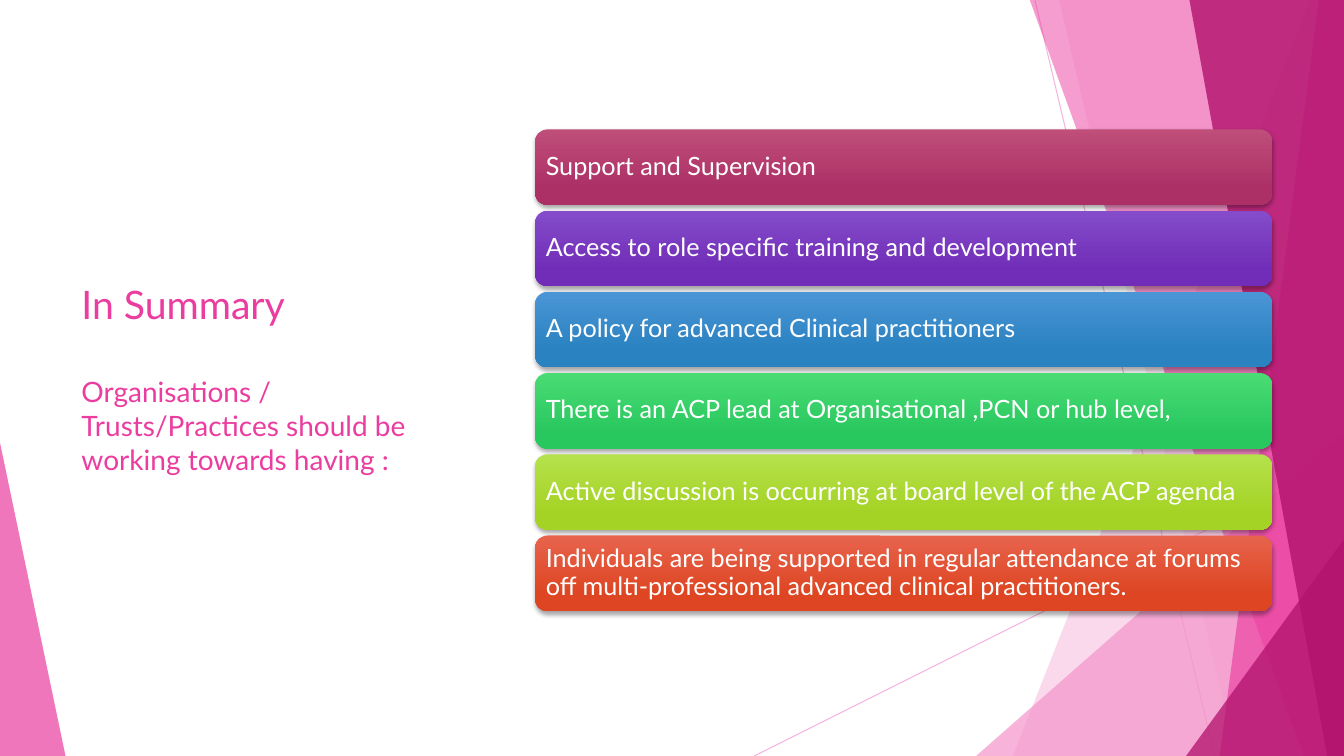
from lxml.etree import SubElement
from pptx import Presentation
from pptx.dml.color import RGBColor
from pptx.enum.shapes import MSO_CONNECTOR, MSO_SHAPE
from pptx.enum.text import MSO_ANCHOR, MSO_AUTO_SIZE, PP_ALIGN
from pptx.oxml.ns import qn
from pptx.util import Inches, Pt

COLS, ROWS = 160, 90
CELL = Inches(1 / 12)

WHITE = RGBColor(0xFF, 0xFF, 0xFF)
LIGHT = RGBColor(0xF4, 0x96, 0xCB)
PINK = RGBColor(0xEB, 0x3D, 0x9F)
DARK = RGBColor(0xB2, 0x13, 0x6D)
ROSE = RGBColor(0xBF, 0x4E, 0x79), RGBColor(0xAC, 0x30, 0x66)
VIOLET = RGBColor(0x84, 0x4C, 0xCA), RGBColor(0x71, 0x2D, 0xB7)
BLUE = RGBColor(0x4A, 0x95, 0xD5), RGBColor(0x2A, 0x82, 0xC1)
GREEN = RGBColor(0x4B, 0xDB, 0x74), RGBColor(0x29, 0xC8, 0x5F)
LIME = RGBColor(0xB5, 0xE1, 0x4B), RGBColor(0xA5, 0xD3, 0x25)
RED = RGBColor(0xE7, 0x63, 0x4C), RGBColor(0xDE, 0x45, 0x22)

RIGHT = [(COLS, ROWS), (COLS, 0)]
FACETS = [
    ([(156, 0), (120.6, ROWS), *RIGHT], LIGHT, 36),
    ([(126.1, 0), (147.1, ROWS), *RIGHT], LIGHT, 20),
    ([(116.2, ROWS), (COLS, 51.5), (COLS, ROWS)], LIGHT, 72),
    ([(122.6, 0), (155.2, ROWS), *RIGHT], PINK, 50),
    ([(157, 0), (145.2, ROWS), *RIGHT], PINK, 66),
    ([(141.6, 0), (158, ROWS), *RIGHT], DARK, 80),
    ([(141.2, ROWS), (COLS, 64.2), (COLS, ROWS)], DARK, 76),
    ([(0, 52.7), (7.8, ROWS), (0, ROWS)], PINK, 70),
]
RAYS = [((89.8, ROWS), (COLS, 54.9)), ((123.2, 0), (144.6, ROWS))]
GOALS = [
    ("Support and Supervision", ROSE),
    ("Access to role specific training and development", VIOLET),
    ("A policy for advanced Clinical practitioners", BLUE),
    ("There is an ACP lead at Organisational ,PCN or hub level,", GREEN),
    ("Active discussion is occurring at board level of the ACP agenda", LIME),
    ("Individuals are being supported in regular attendance at forums off "
     "multi-professional advanced clinical practitioners.", RED),
]
BAR_TOP, BAR_STEP = 15.4, 9.67


def grid(*cells):
    return [round(cell * CELL) for cell in cells]


def write(par, text, *, font, size, tint, lead=1.0, before=0):
    par.text = text
    par.alignment = PP_ALIGN.LEFT
    par.line_spacing = lead
    par.space_before = Pt(before)
    for run in par.runs:
        run.font.name = font
        run.font.size = Pt(size)
        run.font.color.rgb = tint


def fade(shape, share):
    for tint in shape.element.spPr.iter(qn("a:srgbClr")):
        SubElement(tint, qn("a:alpha"), val=str(share * 1000))


class Deck:
    """Holds the style and the current slide, and draws each kind of element."""

    def __init__(self, font):
        self.font = font
        self.show = Presentation()
        self.show.slide_width, self.show.slide_height = grid(COLS, ROWS)
        self.slide = self.show.slides.add_slide(self.show.slide_layouts[5])
        self.shapes = self.slide.shapes

    def ray(self, start, end):
        line = self.shapes.add_connector(
            MSO_CONNECTOR.STRAIGHT, *grid(*start, *end))
        line.line.color.rgb = LIGHT
        line.line.width = Pt(0.75)
        fade(line, 70)
        SubElement(line.element.spPr, qn("a:effectLst"))

    def facet(self, points, tint, share):
        first, *rest = [grid(*point) for point in points]
        build = self.shapes.build_freeform(*first)
        build.add_line_segments(rest, close=True)
        shape = build.convert_to_shape()
        shape.shadow.inherit = False
        shape.fill.solid()
        shape.fill.fore_color.rgb = tint
        shape.line.fill.background()
        fade(shape, share)

    def title(self, head, lead):
        box = self.shapes.title
        box.left, box.top, box.width, box.height = grid(8.5, 18.1, 46.6, 53.8)
        frame = box.text_frame
        frame.word_wrap = True
        frame.auto_size = MSO_AUTO_SIZE.NONE
        frame.vertical_anchor = MSO_ANCHOR.MIDDLE
        write(frame.paragraphs[0], head, font=self.font, size=28, tint=PINK)
        write(frame.add_paragraph(), lead, font=self.font, size=20, tint=PINK,
              before=34)

    def bar(self, top, text, tints):
        shape = self.shapes.add_shape(
            MSO_SHAPE.ROUNDED_RECTANGLE, *grid(63.7, top, 87.8, 9))
        shape.line.fill.background()
        shape.fill.gradient()
        shape.fill.gradient_angle = 270
        for stop, tint, place in zip(shape.fill.gradient_stops, tints, (0, 0.78)):
            stop.color.rgb = tint
            stop.position = place
        self.shade(shape)
        frame = shape.text_frame
        frame.word_wrap = True
        frame.vertical_anchor = MSO_ANCHOR.MIDDLE
        frame.margin_left, frame.margin_right = grid(0.85, 0.85)
        frame.margin_top, frame.margin_bottom = grid(0.85, 0.85)
        write(frame.paragraphs[0], text, font=self.font, size=18, tint=WHITE,
              lead=0.9)

    def shade(self, shape):
        shape.shadow.inherit = False
        effect = shape.element.spPr.find(qn("a:effectLst"))
        cast = SubElement(effect, qn("a:outerShdw"), blurRad=str(Pt(3)),
                          dist=str(Pt(2)), dir="5400000", rotWithShape="0")
        tint = SubElement(cast, qn("a:srgbClr"), val="000000")
        SubElement(tint, qn("a:alpha"), val="35000")


def main():
    deck = Deck("Lato")
    for start, end in RAYS:
        deck.ray(start, end)
    for points, tint, share in FACETS:
        deck.facet(points, tint, share)
    deck.title("In Summary", "Organisations /\vTrusts/Practices should be "
               "working towards having :")
    for row, (text, tints) in enumerate(GOALS):
        deck.bar(BAR_TOP + row * BAR_STEP, text, tints)
    deck.show.save("out.pptx")


if __name__ == "__main__":
    main()
